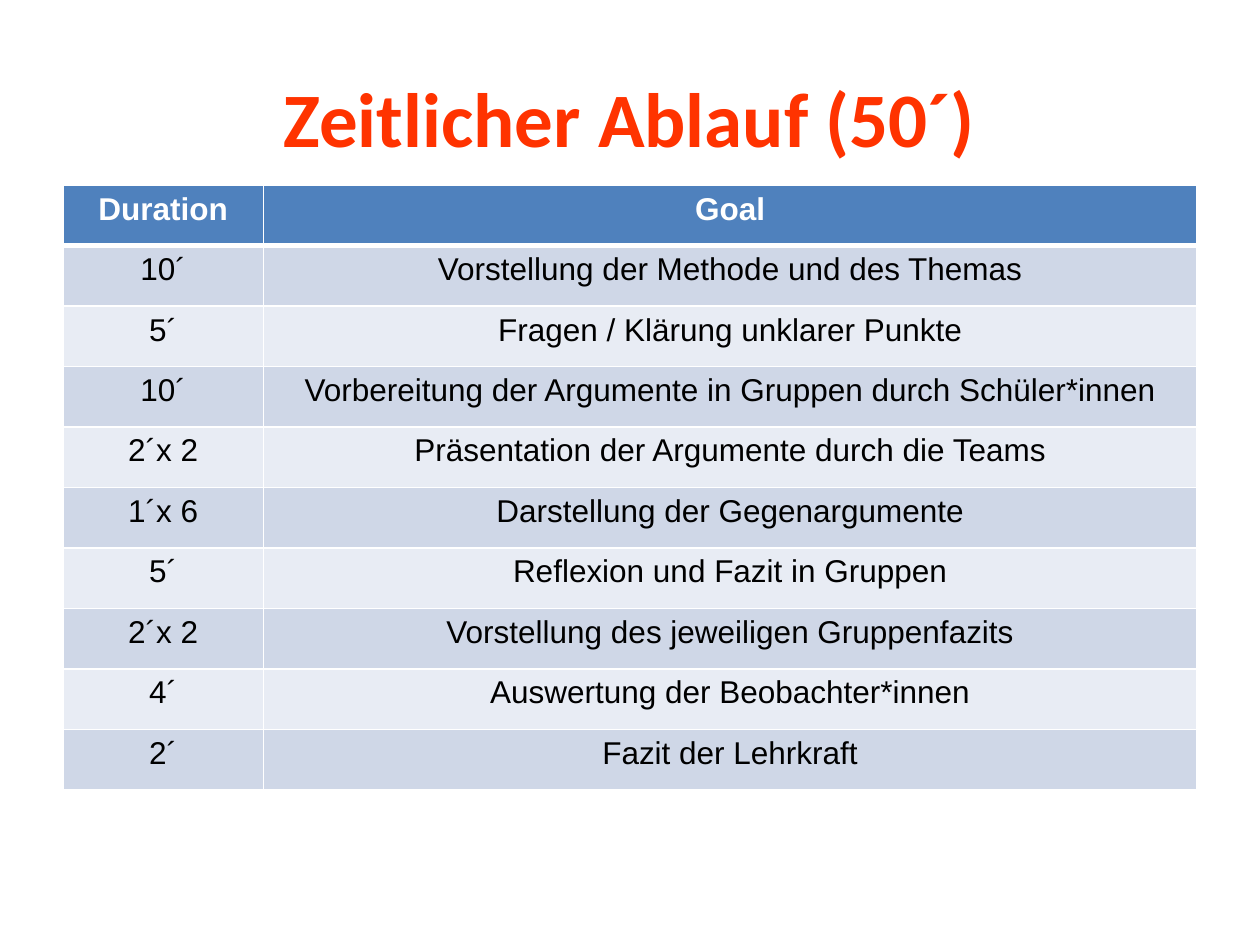
"""Build a slide with the timetable of a debate lesson."""
from lxml import etree
from pptx import Presentation
from pptx import util as u
from pptx.dml.color import RGBColor
from pptx.enum import text
from pptx.oxml.ns import qn

COLORS = {
    "title": "FF3300",
    "head": "4F81BD",
    "odd": "CFD7E7",
    "even": "E8ECF4",
    "white": "FFFFFF",
    "black": "000000",
}
HEADER = ("Duration", "Goal")
STEPS = [
    ("10´", "Vorstellung der Methode und des Themas"),
    ("5´", "Fragen / Klärung unklarer Punkte"),
    ("10´", "Vorbereitung der Argumente in Gruppen durch Schüler*innen"),
    ("2´x 2", "Präsentation der Argumente durch die Teams"),
    ("1´x 6", "Darstellung der Gegenargumente"),
    ("5´", "Reflexion und Fazit in Gruppen"),
    ("2´x 2", "Vorstellung des jeweiligen Gruppenfazits"),
    ("4´", "Auswertung der Beobachter*innen"),
    ("2´", "Fazit der Lehrkraft"),
]
WIDTHS = (1.59, 7.41)
ROW_HEIGHT = 0.48


def color(name):
    return RGBColor.from_string(COLORS[name])


def write(frame, words, font, size, tint, bold):
    para = frame.paragraphs[0]
    para.text = words
    para.alignment = text.PP_ALIGN.CENTER
    para.font.name = font
    para.font.size = u.Pt(size)
    para.font.bold = bold
    para.font.color.rgb = color(tint)


def add_title(slide, words):
    box = slide.shapes.add_textbox(
        u.Inches(0.5), u.Inches(0.3), u.Inches(9), u.Inches(1.25))
    frame = box.text_frame
    frame.word_wrap = True
    frame.vertical_anchor = text.MSO_ANCHOR.MIDDLE
    write(frame, words, "Calibri", 44, "title", True)


def add_edges(cell, row):
    props = cell._tc.get_or_add_tcPr()
    points = {"L": 1, "R": 1, "T": 3 if row == 1 else 1, "B": 3 if row == 0 else 1}
    for side, width in points.items():
        line = etree.SubElement(props, qn(f"a:ln{side}"), w=str(u.Pt(width)))
        fill = etree.SubElement(line, qn("a:solidFill"))
        etree.SubElement(fill, qn("a:srgbClr"), val=COLORS["white"])


def fill_cell(cell, words, row):
    head = row == 0
    add_edges(cell, row)
    cell.fill.solid()
    cell.fill.fore_color.rgb = color("head" if head else "odd" if row % 2 else "even")
    write(cell.text_frame, words, "Arial", 18, "white" if head else "black", head)


def add_schedule(slide, rows):
    table = slide.shapes.add_table(
        len(rows), len(WIDTHS), u.Inches(0.5), u.Inches(1.47),
        u.Inches(sum(WIDTHS)), u.Inches(ROW_HEIGHT * len(rows))).table
    for column, width in zip(table.columns, WIDTHS):
        column.width = u.Inches(width)
    for r, words in enumerate(rows):
        table.rows[r].height = u.Inches(ROW_HEIGHT)
        for c, word in enumerate(words):
            fill_cell(table.cell(r, c), word, r)


def main():
    deck = Presentation()
    deck.slide_width, deck.slide_height = u.Inches(10), u.Inches(7.5)
    slide = deck.slides.add_slide(deck.slide_layouts[6])
    add_title(slide, "Zeitlicher Ablauf (50´)")
    add_schedule(slide, [HEADER, *STEPS])
    deck.save("out.pptx")


if __name__ == "__main__":
    main()
